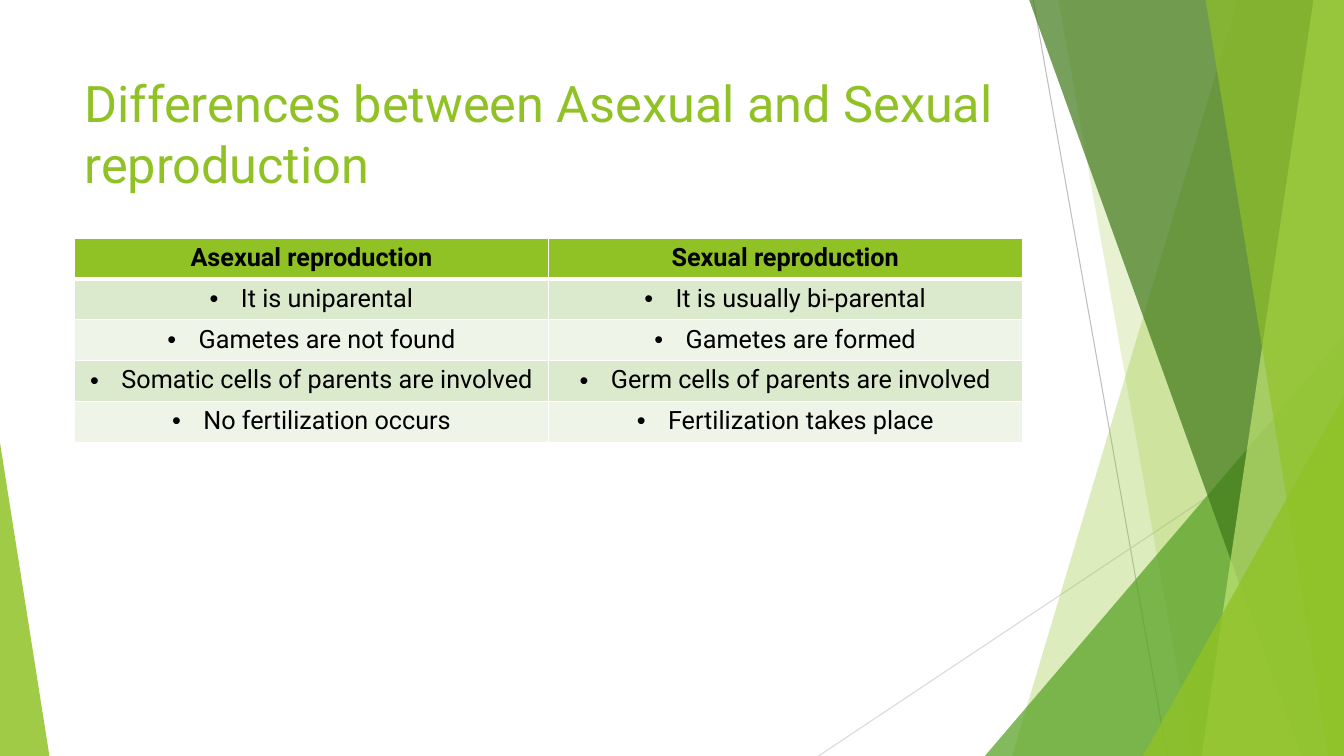
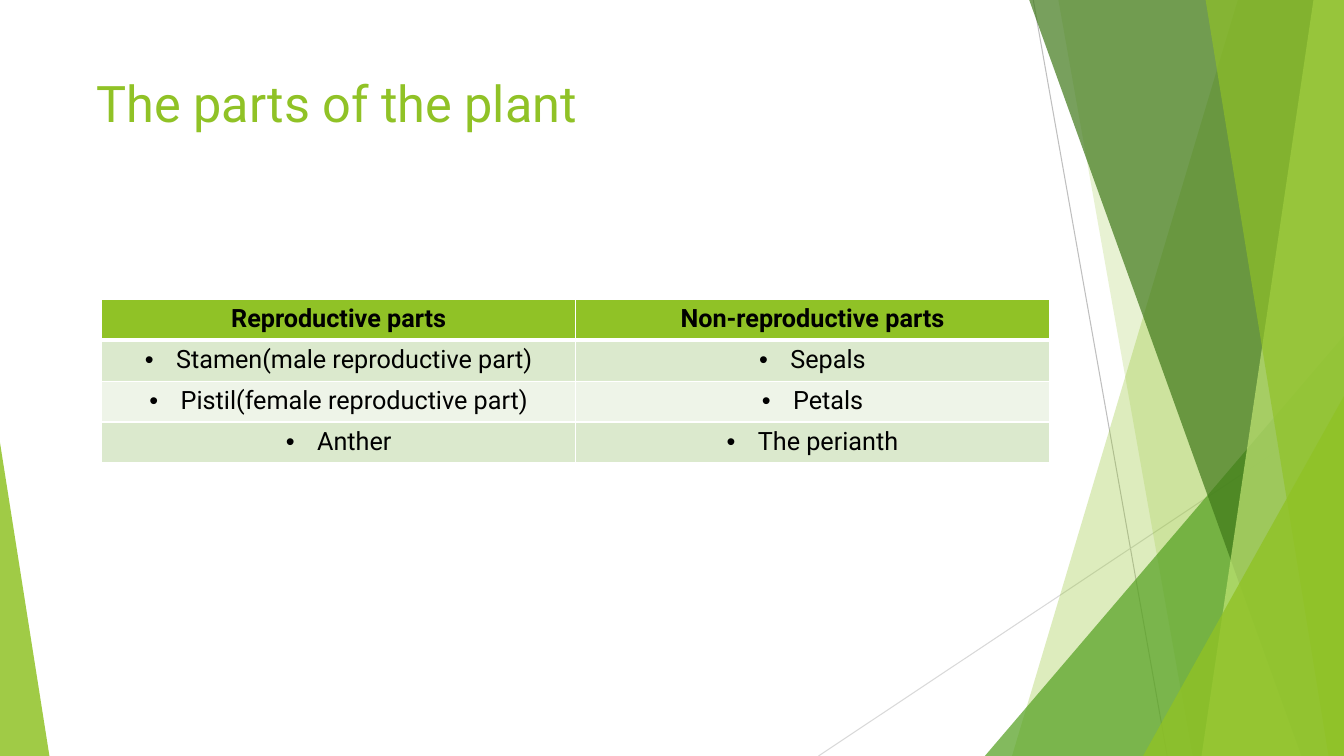
from dataclasses import dataclass

from lxml import etree
from pptx import Presentation
from pptx.dml.color import RGBColor
from pptx.enum.shapes import MSO_CONNECTOR, MSO_SHAPE
from pptx.enum.text import MSO_ANCHOR, PP_ALIGN
from pptx.oxml.ns import qn
from pptx.shapes.autoshape import Shape
from pptx.slide import Slide
from pptx.table import _Cell
from pptx.text.text import TextFrame
from pptx.util import Emu, Inches, Pt

STRAIGHT = MSO_CONNECTOR.STRAIGHT
TRIANGLE = MSO_SHAPE.ISOSCELES_TRIANGLE
LEFT, CENTER = PP_ALIGN.LEFT, PP_ALIGN.CENTER
TOP = MSO_ANCHOR.TOP

SLIDE_WIDTH, SLIDE_HEIGHT = Inches(13.33), Inches(7.5)
FONT = "Roboto"
COLOURS = {
    "lime": "90C226",
    "pale lime": "C0E474",
    "green": "54A021",
    "dark green": "3F7819",
    "grey": "BFBFBF",
    "light grey": "D9D9D9",
    "band": "DBE9CD",
    "light band": "EEF4E8",
    "white": "FFFFFF",
    "black": "000000",
}

# Shares of the slide, in percent
TITLE_LEFT, TITLE_TOP, TITLE_HEIGHT = 5.55, 8.93, 19.2
CONTENT_WIDTH = 70.5
ROW_HEIGHT = 5.41


def across(percent: float) -> Emu:
    return Emu(round(SLIDE_WIDTH * percent / 100))


def down(percent: float) -> Emu:
    return Emu(round(SLIDE_HEIGHT * percent / 100))


@dataclass
class Ray:
    """A thin line; ends are shares of the slide."""
    start: tuple[float, float]
    end: tuple[float, float]
    colour: str


@dataclass
class Facet:
    """A full-height pane from a slanted left side to the right edge."""
    top_left: float
    bottom_left: float
    colour: str
    opacity: int


@dataclass
class Corner:
    """A right triangle standing on the bottom edge."""
    left: float
    right: float
    top: float
    apex: int
    colour: str
    opacity: int


@dataclass
class Comparison:
    """The content of one slide: a title and a table."""
    title: str
    table_left: float
    table_top: float
    rows: list[tuple[str, str]]
    title_indent: float = 0


RAYS = [
    Ray((76.88, 0), (86.85, 100), "grey"),
    Ray((100, 53.73), (60.9, 100), "light grey"),
]
PANES = [
    Facet(92.1, 75.3, "lime", 30),
    Facet(78.75, 88.73, "lime", 20),
    Corner(73.28, 100, 44.4, 1, "green", 72),
    Facet(76.58, 96.83, "dark green", 70),
    Facet(97.73, 89.4, "pale lime", 70),
    Facet(89.7, 98.85, "lime", 65),
    Corner(85.05, 100, 52.4, 1, "lime", 80),
    Corner(0, 3.68, 58.53, 0, "lime", 85),
]
COMPARISONS = [
    Comparison(
        "Differences between Asexual and Sexual reproduction", 5.55, 31.47,
        [
            ("Asexual reproduction", "Sexual reproduction"),
            ("It is uniparental", "It is usually bi-parental"),
            ("Gametes are not found", "Gametes are formed"),
            ("Somatic cells of parents are involved",
             "Germ cells of parents are involved"),
            ("No fertilization occurs", "Fertilization takes place"),
        ],
    ),
    Comparison(
        "The parts of the plant", 7.58, 39.6,
        [
            ("Reproductive parts", "Non-reproductive parts"),
            ("Stamen(male reproductive part)", "Sepals"),
            ("Pistil(female reproductive part)", "Petals"),
            ("Anther", "The perianth"),
        ],
        title_indent=0.12,
    ),
]


def rgb(colour: str) -> RGBColor:
    return RGBColor.from_string(COLOURS[colour])


def write_text(frame: TextFrame, text: str, *, size: float, colour: str,
               bold: bool = False, align: PP_ALIGN = LEFT,
               margin: float = 0, indent: float = 0, bullet: str = "") -> None:
    paragraph = frame.paragraphs[0]
    properties = paragraph._p.get_or_add_pPr()
    properties.set("marL", str(Inches(margin)))
    properties.set("indent", str(Inches(indent)))
    if bullet:
        etree.SubElement(properties, qn("a:buFont"), typeface="Arial")
        etree.SubElement(properties, qn("a:buChar"), char=bullet)
    paragraph.alignment = align
    run = paragraph.add_run()
    run.text = text
    run.font.name = FONT
    run.font.size = Pt(size)
    run.font.bold = bold
    run.font.color.rgb = rgb(colour)


def paint(shape: Shape, colour: str, opacity: int) -> None:
    shape.shadow.inherit = False
    shape.line.fill.background()
    shape.fill.solid()
    shape.fill.fore_color.rgb = rgb(colour)
    colour_element = shape._element.spPr.find(qn("a:solidFill"))[0]
    etree.SubElement(colour_element, qn("a:alpha"), val=str(opacity * 1000))


def draw_ray(slide: Slide, ray: Ray) -> None:
    connector = slide.shapes.add_connector(
        STRAIGHT, across(ray.start[0]), down(ray.start[1]),
        across(ray.end[0]), down(ray.end[1]))
    connector.line.color.rgb = rgb(ray.colour)
    connector.line.width = Pt(0.75)
    etree.SubElement(connector._element.spPr, qn("a:effectLst"))


def draw_pane(slide: Slide, pane: Facet | Corner) -> None:
    if isinstance(pane, Facet):
        builder = slide.shapes.build_freeform(across(pane.top_left), 0)
        builder.add_line_segments([
            (SLIDE_WIDTH, 0), (SLIDE_WIDTH, SLIDE_HEIGHT),
            (across(pane.bottom_left), SLIDE_HEIGHT)], close=True)
        shape = builder.convert_to_shape()
    else:
        shape = slide.shapes.add_shape(
            TRIANGLE, across(pane.left), down(pane.top),
            across(pane.right - pane.left), down(100 - pane.top))
        shape.adjustments[0] = pane.apex
    paint(shape, pane.colour, pane.opacity)


def draw_title(slide: Slide, text: str, indent: float) -> None:
    box = slide.shapes.add_textbox(
        across(TITLE_LEFT), down(TITLE_TOP),
        across(CONTENT_WIDTH), down(TITLE_HEIGHT))
    box.text_frame.word_wrap = True
    box.text_frame.vertical_anchor = TOP
    write_text(box.text_frame, text, size=36, colour="lime", indent=indent)


def set_borders(cell: _Cell, top: float, bottom: float) -> None:
    properties = cell._tc.get_or_add_tcPr()
    widths = {"lnL": 1, "lnR": 1, "lnT": top, "lnB": bottom}
    for side, width in widths.items():
        line = etree.SubElement(properties, qn(f"a:{side}"), w=str(Pt(width)))
        fill = etree.SubElement(line, qn("a:solidFill"))
        etree.SubElement(fill, qn("a:srgbClr"), val=COLOURS["white"])


def draw_table(slide: Slide, comparison: Comparison) -> None:
    rows = comparison.rows
    table = slide.shapes.add_table(
        len(rows), len(rows[0]),
        across(comparison.table_left), down(comparison.table_top),
        across(CONTENT_WIDTH), down(ROW_HEIGHT * len(rows))).table
    table.horz_banding = False
    for row_index, row in enumerate(rows):
        is_header = row_index == 0
        band = "band" if row_index % 2 else "light band"
        bullet_format = {} if is_header else {
            "margin": 0.31, "indent": -0.31, "bullet": "•"}
        for column_index, text in enumerate(row):
            cell = table.cell(row_index, column_index)
            # Borders precede the fill in the cell's properties
            set_borders(cell, top=3 if row_index == 1 else 1,
                        bottom=3 if is_header else 1)
            cell.fill.solid()
            cell.fill.fore_color.rgb = rgb("lime" if is_header else band)
            write_text(cell.text_frame, text, size=18, colour="black",
                       bold=is_header, align=CENTER, **bullet_format)


def main() -> None:
    presentation = Presentation()
    presentation.slide_width = SLIDE_WIDTH
    presentation.slide_height = SLIDE_HEIGHT
    blank_layout = presentation.slide_layouts[6]
    for comparison in COMPARISONS:
        slide = presentation.slides.add_slide(blank_layout)
        # Shared backdrop
        for ray in RAYS:
            draw_ray(slide, ray)
        for pane in PANES:
            draw_pane(slide, pane)
        # Content
        draw_title(slide, comparison.title, comparison.title_indent)
        draw_table(slide, comparison)
    presentation.save("out.pptx")


if __name__ == "__main__":
    main()
